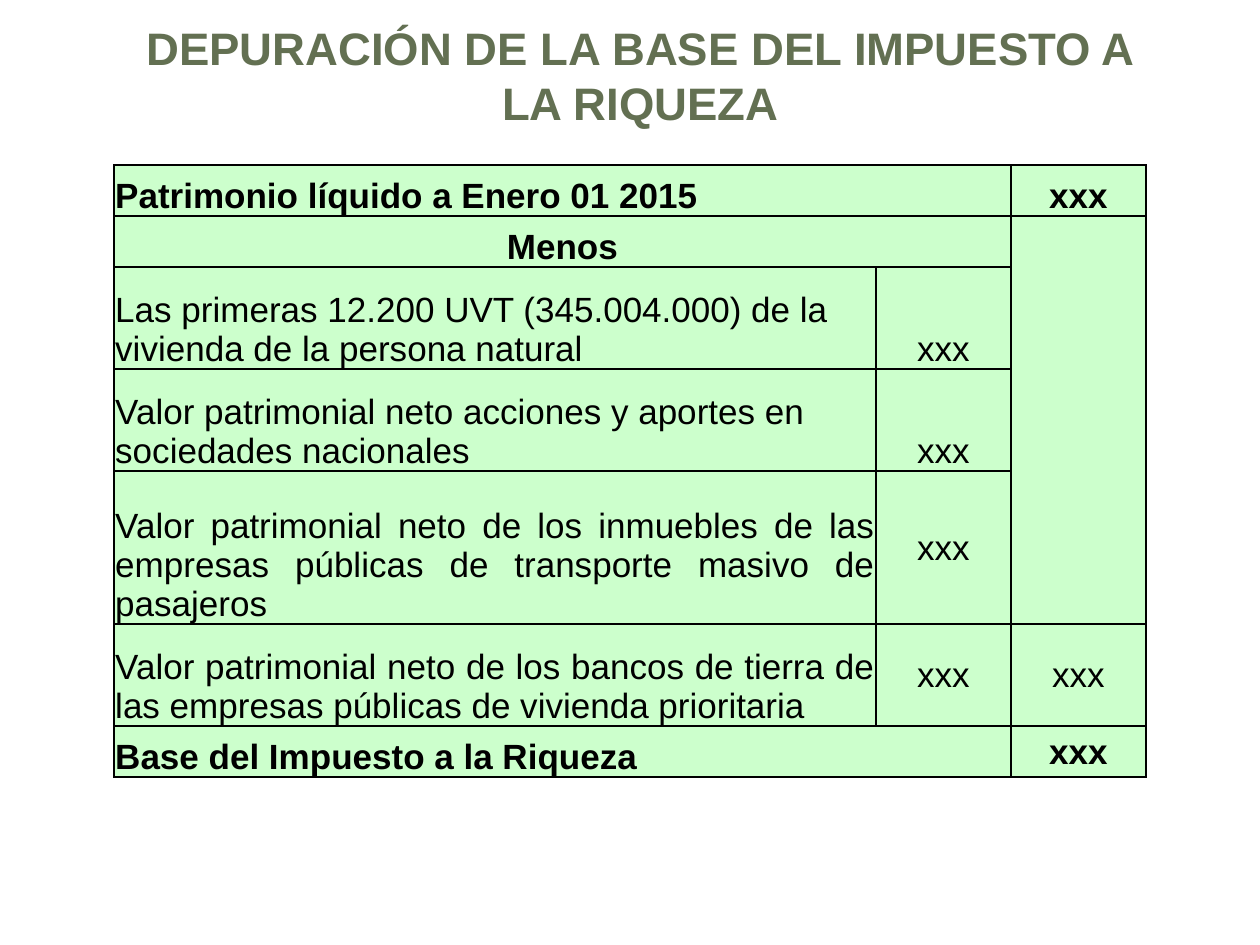
from lxml import etree
from pptx import Presentation
from pptx import util as u
from pptx.dml.color import RGBColor
from pptx.enum import text
from pptx.oxml.ns import qn

PX = 914400 / 126
FONT = "Arial"
OLIVE = RGBColor(0x63, 0x70, 0x52)
MINT = RGBColor(0xCC, 0xFF, 0xCC)
BLACK = RGBColor(0, 0, 0)

LEFT, CENTER, JUSTIFY = text.PP_ALIGN.LEFT, text.PP_ALIGN.CENTER, text.PP_ALIGN.JUSTIFY
BOTTOM, MIDDLE = text.MSO_ANCHOR.BOTTOM, text.MSO_ANCHOR.MIDDLE

TITLE = "DEPURACIÓN DE LA BASE DEL IMPUESTO A LA RIQUEZA"
TITLE_BOX = (105, 26, 1071, 98)
TABLE_ORIGIN = (114, 165)
COLUMN_WIDTHS = [762, 135, 135]
ROW_HEIGHTS = [51, 51, 102, 102, 153, 102, 51]
BOLD_ROWS = {0, 1, 6}
MERGES = [((0, 0), (0, 1)), ((1, 0), (1, 1)), ((1, 2), (4, 2)), ((6, 0), (6, 1))]

# (row, column, wording, alignment, anchor)
ENTRIES = [
    (0, 0, "Patrimonio líquido a Enero 01 2015", LEFT, BOTTOM),
    (0, 2, "xxx", CENTER, BOTTOM),
    (1, 0, "Menos", CENTER, BOTTOM),
    (2, 0, "Las primeras 12.200 UVT (345.004.000) de la vivienda de la persona natural",
     LEFT, BOTTOM),
    (2, 1, "xxx", CENTER, BOTTOM),
    (3, 0, "Valor patrimonial neto acciones y aportes en sociedades nacionales",
     LEFT, BOTTOM),
    (3, 1, "xxx", CENTER, BOTTOM),
    (4, 0, "Valor patrimonial neto de los inmuebles de las empresas públicas de "
           "transporte masivo de pasajeros", JUSTIFY, BOTTOM),
    (4, 1, "xxx", CENTER, MIDDLE),
    (5, 0, "Valor patrimonial neto de los bancos de tierra de las empresas públicas "
           "de vivienda prioritaria", JUSTIFY, BOTTOM),
    (5, 1, "xxx", CENTER, MIDDLE),
    (5, 2, "xxx", CENTER, MIDDLE),
    (6, 0, "Base del Impuesto a la Riqueza", LEFT, BOTTOM),
    (6, 2, "xxx", CENTER, MIDDLE),
]


def px(value):
    return round(value * PX)


def style_paragraph(paragraph, alignment, size, color, bold):
    paragraph.alignment = alignment
    for run in paragraph.runs:
        run.font.name = FONT
        run.font.size = u.Pt(size)
        run.font.bold = bold
        run.font.color.rgb = color


def add_borders(cell):
    properties = cell._tc.get_or_add_tcPr()
    for side in ("a:lnL", "a:lnR", "a:lnT", "a:lnB"):
        line = etree.SubElement(properties, qn(side), w=str(u.Pt(1)))
        fill = etree.SubElement(line, qn("a:solidFill"))
        etree.SubElement(fill, qn("a:srgbClr"), val=str(BLACK))


def add_title(slide):
    title = slide.shapes.title
    title.left, title.top, title.width, title.height = map(px, TITLE_BOX)
    frame = title.text_frame
    frame.text = TITLE
    frame.word_wrap = True
    frame.auto_size = text.MSO_AUTO_SIZE.NONE
    frame.vertical_anchor = MIDDLE
    style_paragraph(frame.paragraphs[0], CENTER, 26, OLIVE, True)


def add_tax_table(slide):
    size = (sum(COLUMN_WIDTHS), sum(ROW_HEIGHTS))
    table = slide.shapes.add_table(
        len(ROW_HEIGHTS), len(COLUMN_WIDTHS), *map(px, TABLE_ORIGIN + size)).table
    for column, width in zip(table.columns, COLUMN_WIDTHS):
        column.width = px(width)
    for row, height in zip(table.rows, ROW_HEIGHTS):
        row.height = px(height)
    for cell in table.iter_cells():
        cell.margin_left = cell.margin_right = cell.margin_top = u.Inches(0.01)
        cell.margin_bottom = 0
        add_borders(cell)
        cell.fill.solid()
        cell.fill.fore_color.rgb = MINT
    for first, last in MERGES:
        table.cell(*first).merge(table.cell(*last))
    for row, column, wording, alignment, anchor in ENTRIES:
        cell = table.cell(row, column)
        cell.text_frame.text = wording
        cell.vertical_anchor = anchor
        style_paragraph(cell.text_frame.paragraphs[0], alignment, 20, BLACK,
                        row in BOLD_ROWS)


def main():
    presentation = Presentation()
    presentation.slide_width, presentation.slide_height = u.Inches(10), u.Inches(7.5)
    slide = presentation.slides.add_slide(presentation.slide_layouts[5])
    add_title(slide)
    add_tax_table(slide)
    presentation.save("out.pptx")


if __name__ == "__main__":
    main()
